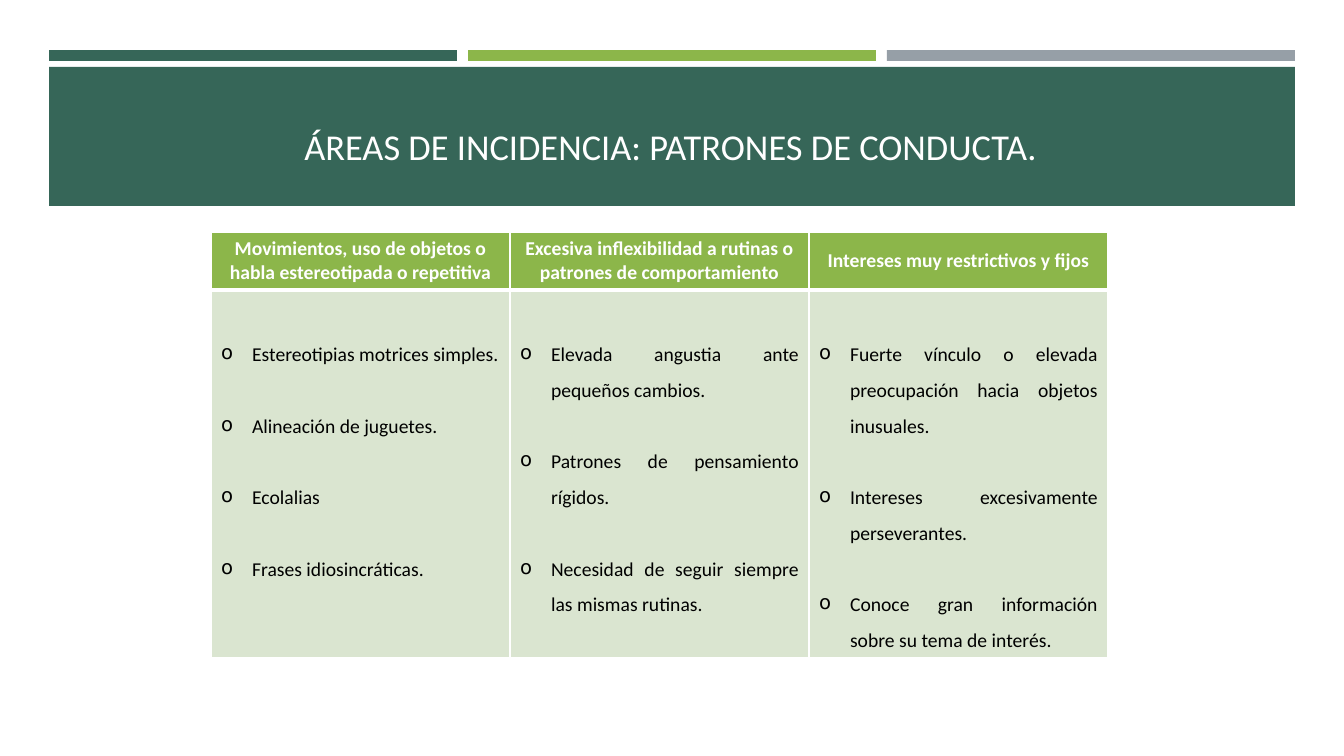
import pptx
import pptx.util
import pptx.dml.color
import pptx.enum.shapes
import pptx.enum.text
import pptx.oxml.ns
import lxml.etree

COLORS = {
    "dark": "366658", "green": "8CB64A", "gray": "969FA7",
    "pale": "DAE5D0", "white": "FFFFFF", "black": "000000",
}
FONT = "Calibri"
ALIGN = pptx.enum.text.PP_ALIGN
ANCHOR = pptx.enum.text.MSO_ANCHOR

HEADS = [
    "Movimientos, uso de objetos o habla estereotipada o repetitiva",
    "Excesiva inflexibilidad a rutinas o patrones de comportamiento",
    "Intereses muy restrictivos y fijos",
]
ITEMS = [
    ["Estereotipias motrices simples.", "Alineación de juguetes.",
     "Ecolalias", "Frases idiosincráticas."],
    ["Elevada angustia ante pequeños cambios.",
     "Patrones de pensamiento rígidos.",
     "Necesidad de seguir siempre las mismas rutinas."],
    ["Fuerte vínculo o elevada preocupación hacia objetos inusuales.",
     "Intereses excesivamente perseverantes.",
     "Conoce gran información sobre su tema de interés."],
]


def px(n):
    return pptx.util.Emu(round(n * 914400 / 100.8))


def color(name):
    return pptx.dml.color.RGBColor.from_string(COLORS[name])


def add_bar(slide, x, y, w, h, fill):
    kind = pptx.enum.shapes.MSO_SHAPE.RECTANGLE
    bar = slide.shapes.add_shape(kind, px(x), px(y), px(w), px(h))
    bar.shadow.inherit = False
    bar.fill.solid()
    bar.fill.fore_color.rgb = color(fill)
    bar.line.fill.background()


def style(para, size, ink, align, bold=False):
    para.alignment = align
    para.font.name = FONT
    para.font.size = pptx.util.Pt(size)
    para.font.bold = bold
    para.font.color.rgb = color(ink)


def set_title(slide, text):
    title = slide.shapes.title
    title.left, title.top = px(63), px(81)
    title.width, title.height = px(1216), px(92)
    frame = title.text_frame
    frame.text = text
    frame.auto_size = pptx.enum.text.MSO_AUTO_SIZE.NONE
    frame.vertical_anchor = ANCHOR.BOTTOM
    style(frame.paragraphs[0], 26, "white", ALIGN.CENTER)
    # Bring the title in front of the band
    tree = title._element.getparent()
    tree.append(title._element)


def add_node(parent, tag, **attrs):
    return lxml.etree.SubElement(parent, pptx.oxml.ns.qn(tag), attrs)


def set_cell(cell, fill, under):
    cell.fill.solid()
    cell.fill.fore_color.rgb = color(fill)
    props = cell._tc.get_or_add_tcPr()
    # White borders come before the fill in the cell properties
    for i, (side, width) in enumerate(zip("LRTB", (1, 1, 1, under))):
        line = add_node(props, "a:ln" + side, w=str(pptx.util.Pt(width)))
        add_node(add_node(line, "a:solidFill"), "a:srgbClr",
                 val=COLORS["white"])
        props.insert(i, line)


def add_bullet(para):
    props = para._p.get_or_add_pPr()
    props.set("marL", str(px(31)))
    props.set("indent", str(-px(31)))
    add_node(props, "a:buChar", char="o")


def fill_head(cell, text):
    set_cell(cell, "green", 3)
    cell.vertical_anchor = ANCHOR.MIDDLE
    cell.text = text
    style(cell.text_frame.paragraphs[0], 14, "white", ALIGN.CENTER, True)


def fill_list(cell, items):
    set_cell(cell, "pale", 1)
    cell.margin_top = px(41)
    frame = cell.text_frame
    frame.text = "\n".join(items)
    for i, para in enumerate(frame.paragraphs):
        style(para, 14, "black", ALIGN.JUSTIFY)
        para.line_spacing = 1.5
        if i:
            para.space_before = pptx.util.Pt(25.6)
        add_bullet(para)


def add_grid(slide):
    wide, heights = 299, (58, 355)
    frame = slide.shapes.add_table(2, len(HEADS), px(211), px(232),
                                   px(wide * len(HEADS)), px(sum(heights)))
    table = frame.table
    table.horz_banding = False
    for row, high in zip(table.rows, heights):
        row.height = px(high)
    for col, (head, items) in enumerate(zip(HEADS, ITEMS)):
        table.columns[col].width = px(wide)
        fill_head(table.cell(0, col), head)
        fill_list(table.cell(1, col), items)


def main():
    deck = pptx.Presentation()
    deck.slide_width, deck.slide_height = px(1344), px(756)
    slide = deck.slides.add_slide(deck.slide_layouts[5])

    # Top bars and title band
    for i, fill in enumerate(("dark", "green", "gray")):
        add_bar(slide, 49 + 419 * i, 50, 408, 11, fill)
    add_bar(slide, 49, 67, 1246, 139, "dark")
    set_title(slide, "ÁREAS DE INCIDENCIA: PATRONES DE CONDUCTA.")

    # Table of behaviour patterns
    add_grid(slide)
    deck.save("out.pptx")


if __name__ == "__main__":
    main()
